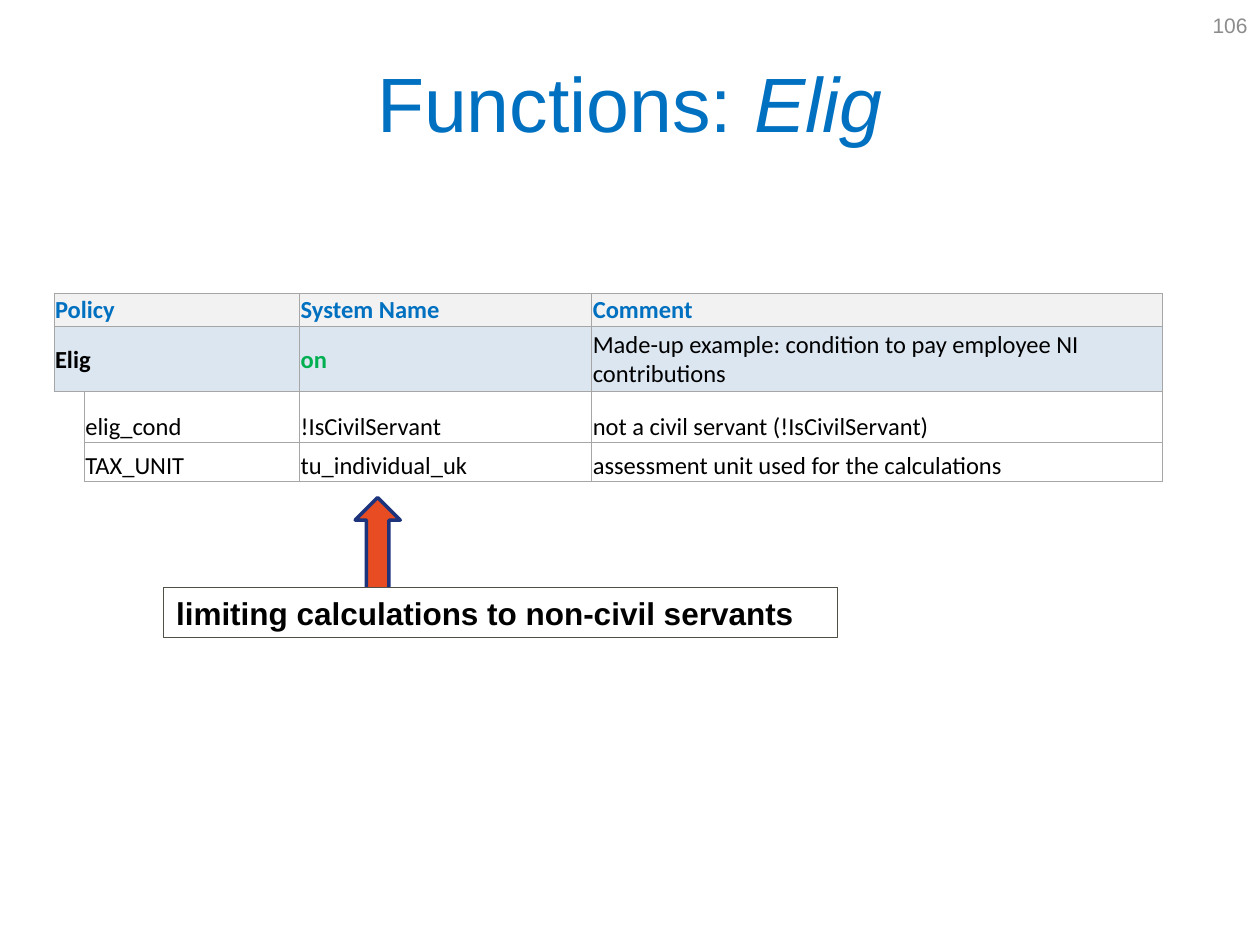
from pptx import Presentation
from pptx.dml.color import RGBColor
from pptx.enum.shapes import MSO_SHAPE
from pptx.enum.text import MSO_ANCHOR, PP_ALIGN
from pptx.oxml.ns import qn
from pptx.util import Cm, Pt
from lxml import etree

LEFT, CENTER, RIGHT = PP_ALIGN.LEFT, PP_ALIGN.CENTER, PP_ALIGN.RIGHT
MIDDLE, BOTTOM = MSO_ANCHOR.MIDDLE, MSO_ANCHOR.BOTTOM
RECT, ARROW = MSO_SHAPE.RECTANGLE, MSO_SHAPE.UP_ARROW

BLUE = RGBColor(0x00, 0x70, 0xC0)
GREEN = RGBColor(0x00, 0xB0, 0x50)
BLACK = RGBColor(0x00, 0x00, 0x00)
WHITE = RGBColor(0xFF, 0xFF, 0xFF)
GRAY = RGBColor(0x8C, 0x8C, 0x8C)
RULE = RGBColor(0xA6, 0xA6, 0xA6)
PALE = RGBColor(0xF2, 0xF2, 0xF2)
SKY = RGBColor(0xDC, 0xE6, 0xF1)
ORANGE = RGBColor(0xE8, 0x4C, 0x22)
NAVY = RGBColor(0x1D, 0x34, 0x7D)
EDGE = RGBColor(0x50, 0x50, 0x46)

# Content
TITLE = [("Functions: ", False), ("Elig", True)]
NUMBER = "106"
NOTE = "limiting calculations to non-civil servants"
COLS = [0.61, 4.34, 5.89, 11.51]
# Row height, fill, anchor, cells as (text, colour, bold)
ROWS = [
    (0.66, PALE, MIDDLE, [("Policy", BLUE, True), ("", BLUE, True),
                          ("System Name", BLUE, True), ("Comment", BLUE, True)]),
    (1.32, SKY, MIDDLE, [("Elig", BLACK, True), ("", BLACK, True), ("on", GREEN, True),
                         ("Made-up example: condition to pay employee NI contributions",
                          BLACK, False)]),
    (1.02, WHITE, BOTTOM, [("", BLACK, False), ("elig_cond", BLACK, False),
                           ("!IsCivilServant", BLACK, False),
                           ("not a civil servant (!IsCivilServant)", BLACK, False)]),
    (0.66, WHITE, BOTTOM, [("", BLACK, False), ("TAX_UNIT", BLACK, False),
                           ("tu_individual_uk", BLACK, False),
                           ("assessment unit used for the calculations", BLACK, False)]),
]


def write(frame, text, size, color, font="Arial", bold=False, align=LEFT, anchor=MIDDLE):
    """Write a string, or a list of (string, italic) runs."""
    frame.word_wrap = True
    frame.vertical_anchor = anchor
    para = frame.paragraphs[0]
    para.alignment = align
    for part, slant in [(text, False)] if isinstance(text, str) else text:
        run = para.add_run()
        run.text = part
        run.font.size, run.font.name = Pt(size), font
        run.font.bold, run.font.italic = bold, slant
        run.font.color.rgb = color


def border(cell, sides):
    """Rule the named sides of a cell and clear the others."""
    props = cell._tc.get_or_add_tcPr()
    for side in "LRTB":
        line = etree.SubElement(props, qn("a:ln" + side), w=str(Pt(0.5)))
        if side in sides:
            fill = etree.SubElement(line, qn("a:solidFill"))
            etree.SubElement(fill, qn("a:srgbClr"), val=str(RULE))
        else:
            etree.SubElement(line, qn("a:noFill"))


def shape(kind, box, fill, line, width):
    item = slide.shapes.add_shape(kind, *map(Cm, box))
    item.shadow.inherit = False
    item.fill.solid()
    item.fill.fore_color.rgb = fill
    item.line.color.rgb = line
    item.line.width = Pt(width)
    return item


deck = Presentation()
deck.slide_width, deck.slide_height = Cm(25.4), Cm(19.05)
slide = deck.slides.add_slide(deck.slide_layouts[6])

# Title and slide number
head = slide.shapes.add_textbox(Cm(1.27), Cm(0.76), Cm(22.86), Cm(2.57))
write(head.text_frame, TITLE, 44, BLUE, align=CENTER)
page = slide.shapes.add_textbox(Cm(19.48), Cm(0), Cm(5.92), Cm(1.02))
write(page.text_frame, NUMBER, 12, GRAY, align=RIGHT)

# Policy table
table = slide.shapes.add_table(
    len(ROWS), len(COLS), Cm(1.09), Cm(5.92),
    Cm(sum(COLS)), Cm(sum(row[0] for row in ROWS))).table
table.first_row = table.horz_banding = False
for col, width in zip(table.columns, COLS):
    col.width = Cm(width)
for r, (height, fill, anchor, cells) in enumerate(ROWS):
    table.rows[r].height = Cm(height)
    for c, (text, color, bold) in enumerate(cells):
        cell = table.cell(r, c)
        cell.margin_left = cell.margin_right = cell.margin_top = Cm(0.02)
        cell.margin_bottom = 0
        cell.vertical_anchor = anchor
        indent = c == 0 and not text
        border(cell, ("RT" if r == 2 else "R") if indent else "LRTB")
        cell.fill.solid()
        cell.fill.fore_color.rgb = fill
        write(cell.text_frame, text, 14, color, font="Calibri", bold=bold, anchor=anchor)
    if cells[0][0]:
        table.cell(r, 0).merge(table.cell(r, 1))

# Arrow and note below the table
shape(ARROW, (7.16, 10.03, 0.91, 2.39), ORANGE, NAVY, 2)
note = shape(RECT, (3.3, 11.84, 13.59, 1.02), WHITE, EDGE, 0.75)
write(note.text_frame, NOTE, 18, BLACK, bold=True)

deck.save("out.pptx")
